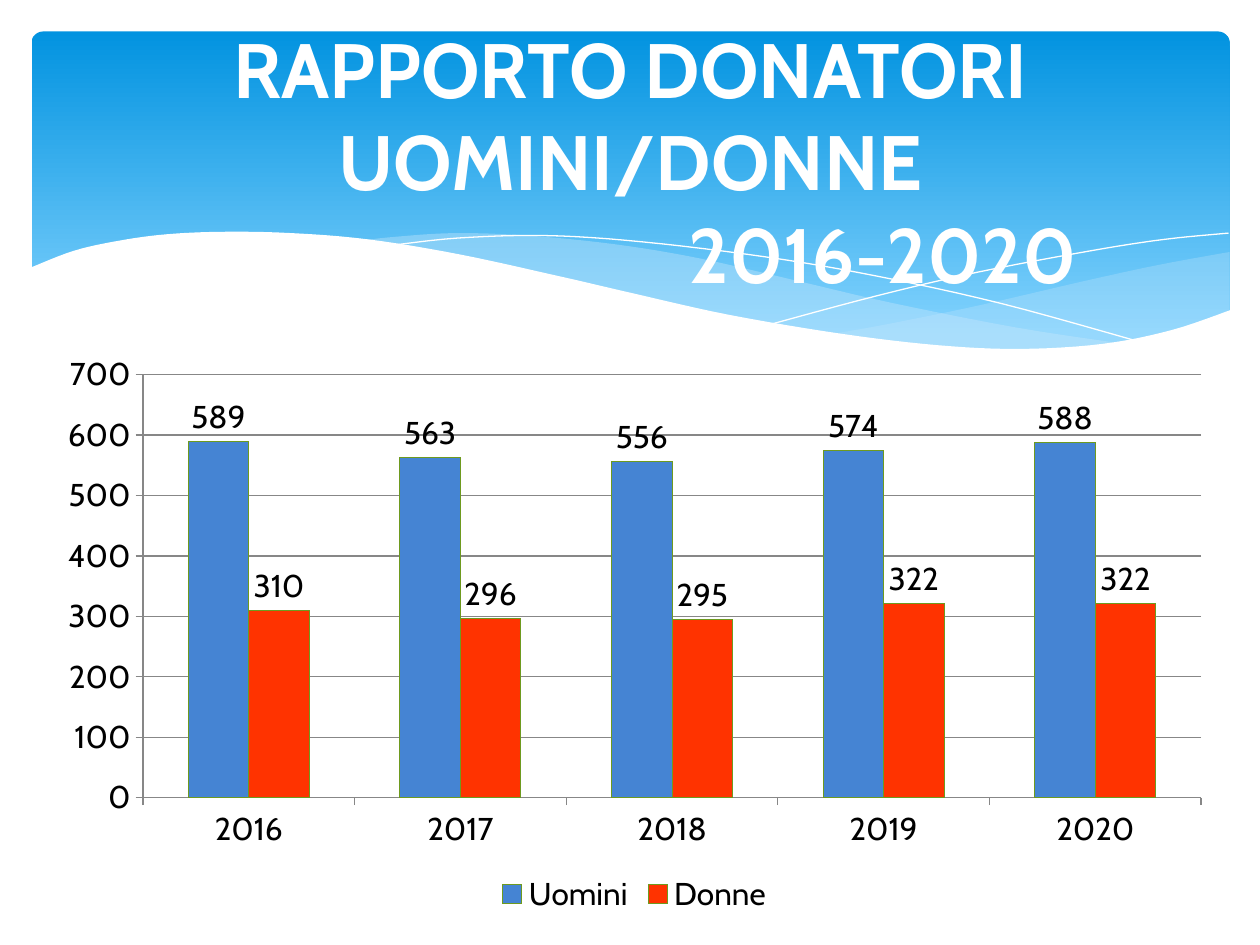
from dataclasses import dataclass

from lxml import etree
from pptx import Presentation
from pptx.chart.data import CategoryChartData
from pptx.dml.color import RGBColor
from pptx.enum.chart import XL_CHART_TYPE, XL_LABEL_POSITION, XL_LEGEND_POSITION, XL_TICK_MARK
from pptx.enum.shapes import MSO_SHAPE
from pptx.enum.text import MSO_ANCHOR, PP_ALIGN
from pptx.oxml.ns import qn
from pptx.util import Inches, Pt

COLUMN_CHART = XL_CHART_TYPE.COLUMN_CLUSTERED
OUTSIDE_END = XL_LABEL_POSITION.OUTSIDE_END
LEGEND_BOTTOM = XL_LEGEND_POSITION.BOTTOM
TICK_OUTSIDE = XL_TICK_MARK.OUTSIDE
TICK_NONE = XL_TICK_MARK.NONE
ROUNDED = MSO_SHAPE.ROUNDED_RECTANGLE
MIDDLE = MSO_ANCHOR.MIDDLE
CENTER = PP_ALIGN.CENTER

COLUMNS, ROWS = 100, 75
CELL = Inches(0.1)
CURVE_STEPS = 6


@dataclass(frozen=True)
class Theme:
    font: str = "Cabin"
    title_size: int = 44
    chart_size: int = 18
    white: str = "FFFFFF"
    text: str = "000000"
    sky_top: str = "0293E0"
    sky_bottom: str = "83D3FE"
    wave: str = "C6E7FC"
    grid: str = "878787"
    bar_outline: str = "6E9A1F"
    men: str = "4584D3"
    women: str = "FF3300"


THEME = Theme()

RIGHT_WAVE = [
    [(97.6, 20), (92.1, 21), (86.1, 22.3), (77.9, 24.2), (70.6, 25.7), (66.1, 26.5)],
    [(66.1, 26.5), (71.9, 27.2), (78.1, 27.7), (83.5, 27.7), (88.9, 27.2), (93.5, 26.2), (97.6, 24.7)],
]
LONG_WAVE = [
    [(89.3, 27.3), (80.7, 26), (70.6, 24), (62.9, 22.2), (55.5, 20.5), (48.9, 19.4), (42, 18.7),
     (36.1, 18.5), (31.3, 18.8), (28.6, 19.1)],
    [(28.6, 19.1), (36.2, 20.3), (44.9, 22.2), (53, 24), (61.8, 25.8), (69.5, 27), (76.1, 27.7),
     (82.8, 27.8), (89.3, 27.3)],
]
FALLING_LINE = [[(30.9, 19.5), (36.3, 18.9), (43.3, 18.7), (51, 19.2), (60.8, 20.4), (69.5, 21.9),
                 (79.5, 24.1), (90.7, 27.2)]]
RISING_LINE = [[(61.3, 25.7), (69.5, 23.5), (77.6, 21.6), (86.6, 19.9), (92.4, 19), (97.5, 18.5)]]
WHITE_WAVE = [
    [(97.7, 24.6), (93, 26.2), (87.5, 27.3), (80.9, 27.7), (74.4, 27.4), (66.8, 26.5), (57.9, 25),
     (50.3, 23.3), (44.7, 22), (36.5, 20.2), (29.2, 19), (23, 18.5), (17.7, 18.4), (13.2, 18.6),
     (9.5, 19.1), (5.9, 19.9), (2.3, 21.3)],
    [(2.3, 32.9), (97.7, 32.9)],
]


def color(code):
    return RGBColor.from_string(code)


def cells(*counts):
    return [round(count * CELL) for count in counts]


def smooth(points):
    padded = [points[0], *points, points[-1]]
    curve = [points[0]]
    for before, start, end, after in zip(padded, padded[1:], padded[2:], padded[3:]):
        for step in range(1, CURVE_STEPS + 1):
            t = step / CURVE_STEPS
            curve.append(tuple(
                b + t * (c - a) / 2 + t**2 * (a - 2.5 * b + 2 * c - d / 2)
                + t**3 * (3 * b - a - 3 * c + d) / 2
                for a, b, c, d in zip(before, start, end, after)))
    return curve


def add_curves(slide, curves, closed=True):
    first, *others = [
        cells(*point) for points in curves
        for point in (smooth(points) if len(points) > 2 else points)]
    builder = slide.shapes.build_freeform(*first)
    builder.add_line_segments(others, close=closed)
    shape = builder.convert_to_shape()
    shape.shadow.inherit = False
    return shape


def add_wave(slide, curves, fill, opacity=100):
    shape = add_curves(slide, curves)
    shape.fill.solid()
    shape.fill.fore_color.rgb = color(fill)
    shape.line.fill.background()
    if opacity < 100:
        rgb = shape.fill._xPr.find(".//" + qn("a:srgbClr"))
        etree.SubElement(rgb, qn("a:alpha"), val=str(opacity * 1000))


def add_hairline(slide, curves):
    shape = add_curves(slide, curves, closed=False)
    shape.fill.background()
    shape.line.color.rgb = color(THEME.white)
    shape.line.width = Pt(0)


def add_sky(slide):
    shape = slide.shapes.add_shape(ROUNDED, *cells(2.5, 2.5, 95.1, 27))
    shape.adjustments[0] = 0.034
    shape.shadow.inherit = False
    shape.line.fill.background()
    shape.fill.gradient()
    shape.fill.gradient_angle = 270
    stops = [(0, THEME.sky_top), (0.9, THEME.sky_bottom)]
    for stop, (position, code) in zip(shape.fill.gradient_stops, stops):
        stop.position = position
        stop.color.rgb = color(code)


def add_title(slide, lines):
    frame = slide.shapes.add_textbox(*cells(2.8, 2.9, 94.5, 19.6)).text_frame
    frame.word_wrap = True
    frame.vertical_anchor = MIDDLE
    for index, (text, indent) in enumerate(lines):
        paragraph = frame.paragraphs[0] if index == 0 else frame.add_paragraph()
        paragraph.text = text
        paragraph.alignment = CENTER
        paragraph.font.name = THEME.font
        paragraph.font.size = Pt(THEME.title_size)
        paragraph.font.bold = True
        paragraph.font.color.rgb = color(THEME.white)
        paragraph._p.get_or_add_pPr().set("marL", str(indent * CELL))


def style_axis(axis):
    axis.major_tick_mark = TICK_OUTSIDE
    axis.minor_tick_mark = TICK_NONE
    axis.format.line.color.rgb = color(THEME.grid)


def add_donor_chart(slide, years, series):
    data = CategoryChartData()
    data.categories = years
    for name, values, _ in series:
        data.add_series(name, values)
    chart = slide.shapes.add_chart(COLUMN_CHART, *cells(3.5, 27.3, 93.7, 45.7), data).chart
    chart.has_title = False
    chart.font.name = THEME.font
    chart.font.size = Pt(THEME.chart_size)
    chart.font.color.rgb = color(THEME.text)
    chart.has_legend = True
    chart.legend.position = LEGEND_BOTTOM
    chart.legend.include_in_layout = False

    style_axis(chart.category_axis)
    style_axis(chart.value_axis)
    chart.value_axis.minimum_scale = 0
    chart.value_axis.maximum_scale = 700
    chart.value_axis.major_unit = 100
    chart.value_axis.major_gridlines.format.line.color.rgb = color(THEME.grid)

    plot = chart.plots[0]
    plot.vary_by_categories = False
    plot.gap_width = 150
    plot.overlap = 0
    for bars, (_, _, fill) in zip(plot.series, series):
        bars.format.fill.solid()
        bars.format.fill.fore_color.rgb = color(fill)
        bars.format.line.color.rgb = color(THEME.bar_outline)
        bars.data_labels.show_value = True
        bars.data_labels.position = OUTSIDE_END


def main():
    presentation = Presentation()
    presentation.slide_width, presentation.slide_height = cells(COLUMNS, ROWS)
    slide = presentation.slides.add_slide(presentation.slide_layouts[6])
    add_sky(slide)
    add_wave(slide, RIGHT_WAVE, THEME.wave, opacity=29)
    add_wave(slide, LONG_WAVE, THEME.wave, opacity=40)
    add_hairline(slide, FALLING_LINE)
    add_hairline(slide, RISING_LINE)
    add_wave(slide, WHITE_WAVE, THEME.white)
    add_title(slide, [("RAPPORTO DONATORI UOMINI/DONNE", 0), ("2016-2020", 40)])
    add_donor_chart(slide, ["2016", "2017", "2018", "2019", "2020"], [
        ("Uomini", (589, 563, 556, 574, 588), THEME.men),
        ("Donne", (310, 296, 295, 322, 322), THEME.women),
    ])
    presentation.save("out.pptx")


if __name__ == "__main__":
    main()
